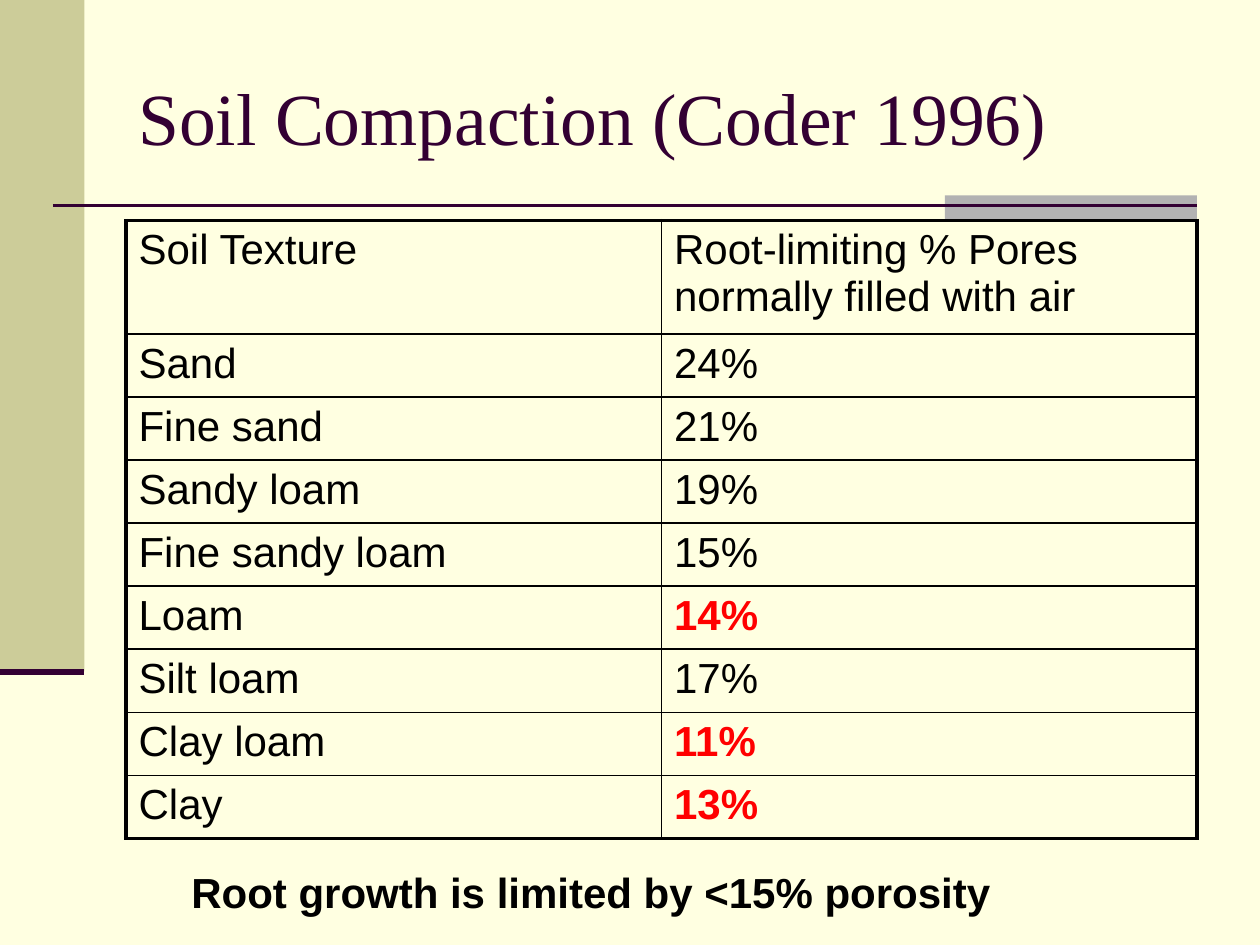
import pptx
import pptx.dml.color
import pptx.enum.shapes
import pptx.enum.text
import pptx.oxml
import pptx.oxml.ns
import pptx.util

# Content
TITLE = "Soil Compaction (Coder 1996)"
HEAD = ("Soil Texture", "Root-limiting % Pores normally filled with air")
SOILS = [
    ("Sand", 24),
    ("Fine sand", 21),
    ("Sandy loam", 19),
    ("Fine sandy loam", 15),
    ("Loam", 14),
    ("Silt loam", 17),
    ("Clay loam", 11),
    ("Clay", 13),
]
LIMIT = 15
NOTE = f"Root growth is limited by <{LIMIT}% porosity"

THEME = {
    "page": "FFFFE1", "band": "CCCC99", "tab": "B2B2B2",
    "plum": "330033", "ink": "000000", "alert": "FF0000",
    "serif": "Times New Roman", "sans": "Arial",
    "big": 42, "body": 24,
    "frame": 2.25, "grid": 1, "rule": 1.5, "heavy": 3.5,
}

# Layout, in inches
WIDE, HIGH = 10, 7.5
LEFT, RIGHT = 1, 9.5
TOP, FULL, TALL = 1.75, 4.81, 0.85
BAND = (0, 0, 0.67, 5.33)
TAB = (7.5, 1.55, 2, 0.2)
LINES = [
    ((0.42, 1.63), (RIGHT, 1.63), "rule"),
    ((0, BAND[3]), (BAND[2], BAND[3]), "heavy"),
]

inch = pptx.util.Inches


def tint(key):
    return pptx.dml.color.RGBColor.from_string(THEME[key])


def paint(fill, key):
    fill.solid()
    fill.fore_color.rgb = tint(key)


def write(frame, text, face, size, ink, bold=False):
    frame.word_wrap = True
    run = frame.paragraphs[0].add_run()
    run.text = text
    form = {"name": THEME[face], "size": pptx.util.Pt(THEME[size]), "bold": bold}
    for name, value in form.items():
        setattr(run.font, name, value)
    run.font.color.rgb = tint(ink)


def block(slide, box, key):
    kind = pptx.enum.shapes.MSO_SHAPE.RECTANGLE
    shape = slide.shapes.add_shape(kind, *map(inch, box))
    shape.shadow.inherit = False
    paint(shape.fill, key)
    shape.line.fill.background()


def stroke(slide, start, end, weight):
    kind = pptx.enum.shapes.MSO_CONNECTOR.STRAIGHT
    line = slide.shapes.add_connector(kind, *map(inch, start + end))
    line.line.color.rgb = tint("plum")
    line.line.width = pptx.util.Pt(THEME[weight])
    props = line._element.spPr
    props.append(props.makeelement(pptx.oxml.ns.qn("a:effectLst"), {}))


def label(slide, box, anchor, *style):
    frame = slide.shapes.add_textbox(*map(inch, box)).text_frame
    frame.vertical_anchor = anchor
    write(frame, *style)


def border(cell, outer):
    props = cell._tc.get_or_add_tcPr()
    for spot, (side, edge) in enumerate(outer.items()):
        width = pptx.util.Pt(THEME["frame" if edge else "grid"])
        props.insert(spot, pptx.oxml.parse_xml(
            f'<a:{side} {pptx.oxml.ns.nsdecls("a")} w="{width}"><a:solidFill>'
            f'<a:srgbClr val="{THEME["ink"]}"/></a:solidFill></a:{side}>'))


def chart(slide):
    rows = [(HEAD, False)]
    rows += [((soil, f"{air}%"), air < LIMIT) for soil, air in SOILS]
    last, end = len(rows) - 1, len(HEAD) - 1
    box = (LEFT, TOP, RIGHT - LEFT, FULL)
    table = slide.shapes.add_table(len(rows), len(HEAD), *map(inch, box)).table
    table.first_row = table.horz_banding = False
    for column in table.columns:
        column.width = inch((RIGHT - LEFT) / len(HEAD))
    for r, (texts, low) in enumerate(rows):
        table.rows[r].height = inch((FULL - TALL) / last if r else TALL)
        for c, text in enumerate(texts):
            cell = table.cell(r, c)
            cell.fill.background()
            border(cell, {"lnL": c == 0, "lnR": c == end,
                          "lnT": r == 0, "lnB": r == last})
            hot = low and c == end
            write(cell.text_frame, text, "sans", "body",
                  "alert" if hot else "ink", hot)


def main():
    deck = pptx.Presentation()
    deck.slide_width, deck.slide_height = inch(WIDE), inch(HIGH)
    slide = deck.slides.add_slide(deck.slide_layouts[6])
    paint(slide.background.fill, "page")

    # Side band, tab and rules
    block(slide, BAND, "band")
    block(slide, TAB, "tab")
    for line in LINES:
        stroke(slide, *line)

    # Title, table and closing note
    anchor = pptx.enum.text.MSO_ANCHOR
    label(slide, (LEFT, 0.3, RIGHT - LEFT, 1.25), anchor.MIDDLE,
          TITLE, "serif", "big", "plum")
    chart(slide)
    label(slide, (1.42, 6.83, 7.08, 0.5), anchor.TOP,
          NOTE, "sans", "body", "ink", True)
    deck.save("out.pptx")


if __name__ == "__main__":
    main()
